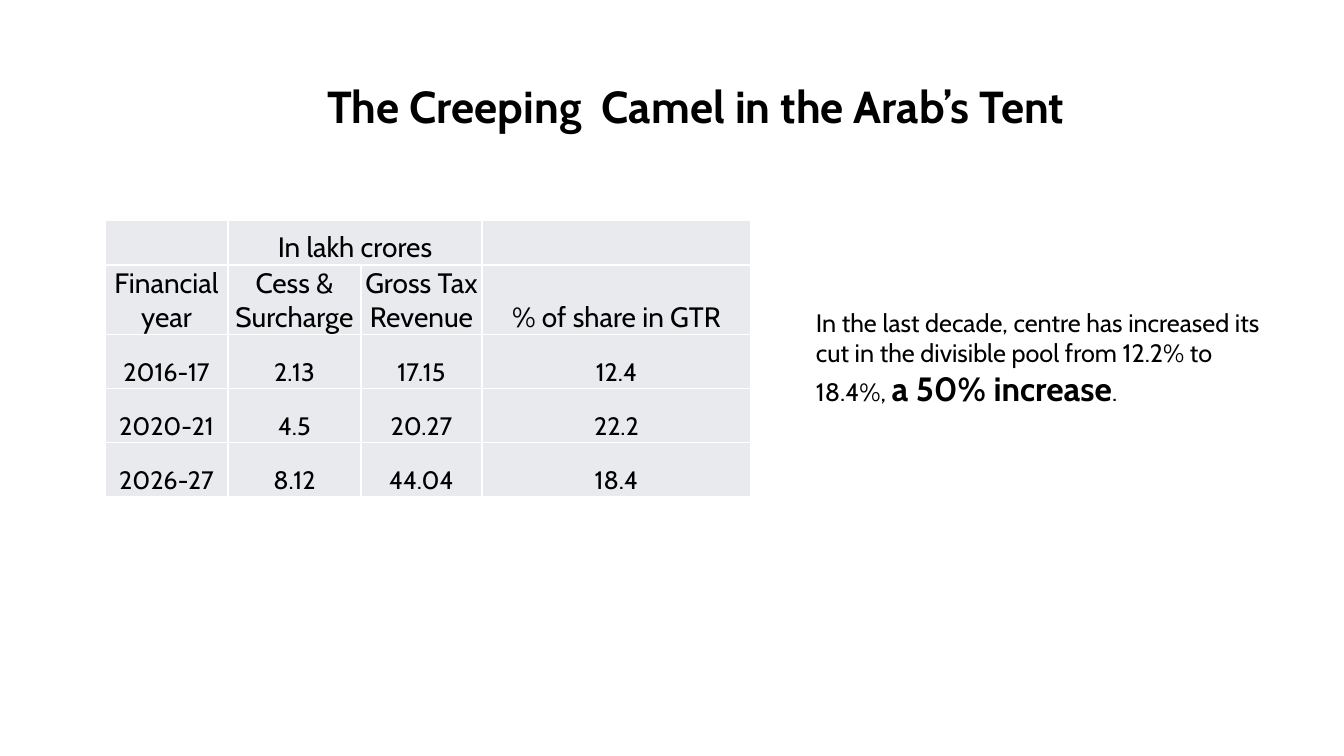
from lxml import etree
from pptx import Presentation
from pptx.dml.color import RGBColor
from pptx.enum.text import MSO_ANCHOR, MSO_AUTO_SIZE, PP_ALIGN
from pptx.oxml.ns import qn
from pptx.util import Pt

TITLE = [("The Creeping  Camel in the Arab’s Tent", 32, True)]
REMARK = [
    ("In the last decade, centre has increased its cut in the divisible pool from 12.2% to 18.4%, ", 18, False),
    ("a 50% increase", 24, True),
    (".", 18, False),
]
TAX_ROWS = [
    ("", "In lakh crores", "", ""),
    ("Financial year", "Cess & Surcharge", "Gross Tax Revenue", "% of share in GTR"),
    ("2016-17", "2.13", "17.15", "12.4"),
    ("2020-21", "4.5", "20.27", "22.2"),
    ("2026-27", "8.12", "44.04", "18.4"),
]
HEADER_ROWS = 2
COLUMN_WIDTHS = [123, 133, 121, 269]
ROW_HEIGHTS = [45, 62, 54, 54, 54]

FONT = "Cabin"
BLACK = RGBColor(0x00, 0x00, 0x00)
WHITE = RGBColor(0xFF, 0xFF, 0xFF)
PALE_GREY = RGBColor(0xE8, 0xEA, 0xED)
CENTER = PP_ALIGN.CENTER
LEFT = PP_ALIGN.LEFT
BOTTOM = MSO_ANCHOR.BOTTOM
GROW = MSO_AUTO_SIZE.SHAPE_TO_FIT_TEXT


def px(length):
    return round(length * 914400 / 100.8)


def write(para, spans, align):
    para.alignment = align
    for text, size, bold in spans:
        span = para.add_run()
        span.text = text
        span.font.name = FONT
        span.font.size = Pt(size)
        span.font.bold = bold
        span.font.color.rgb = BLACK


def add_text(page, place, spans, align):
    box = page.shapes.add_textbox(*map(px, place))
    box.text_frame.word_wrap = True
    box.text_frame.auto_size = GROW
    write(box.text_frame.paragraphs[0], spans, align)


def style_cell(cell):
    cell.margin_left = cell.margin_right = cell.margin_top = px(1)
    cell.margin_bottom = 0
    cell.vertical_anchor = BOTTOM
    cell.fill.solid()
    cell.fill.fore_color.rgb = PALE_GREY
    properties = cell._tc.get_or_add_tcPr()
    for position, side in enumerate(("a:lnL", "a:lnR", "a:lnT", "a:lnB")):
        line = etree.Element(qn(side), w=str(Pt(1)))
        paint = etree.SubElement(line, qn("a:solidFill"))
        etree.SubElement(paint, qn("a:srgbClr"), val=str(WHITE))
        properties.insert(position, line)


def add_tax_table(page, left, top):
    frame = page.shapes.add_table(
        len(ROW_HEIGHTS), len(COLUMN_WIDTHS), px(left), px(top),
        px(sum(COLUMN_WIDTHS)), px(sum(ROW_HEIGHTS)))
    table = frame.table
    table.first_row = table.horz_banding = False
    for column, width in zip(table.columns, COLUMN_WIDTHS):
        column.width = px(width)
    for row, height in zip(table.rows, ROW_HEIGHTS):
        row.height = px(height)
    for row_number, texts in enumerate(TAX_ROWS):
        size = 20 if row_number < HEADER_ROWS else 18
        for column_number, text in enumerate(texts):
            cell = table.cell(row_number, column_number)
            style_cell(cell)
            if text:
                write(cell.text_frame.paragraphs[0], [(text, size, False)], CENTER)
    table.cell(0, 1).merge(table.cell(0, 2))


def main():
    deck = Presentation()
    deck.slide_width, deck.slide_height = px(1344), px(756)
    page = deck.slides.add_slide(deck.slide_layouts[6])
    add_tax_table(page, 105, 220)
    add_text(page, (806, 302, 477, 173), REMARK, LEFT)
    add_text(page, (109, 74, 1174, 65), TITLE, CENTER)
    deck.save("out.pptx")


if __name__ == "__main__":
    main()
